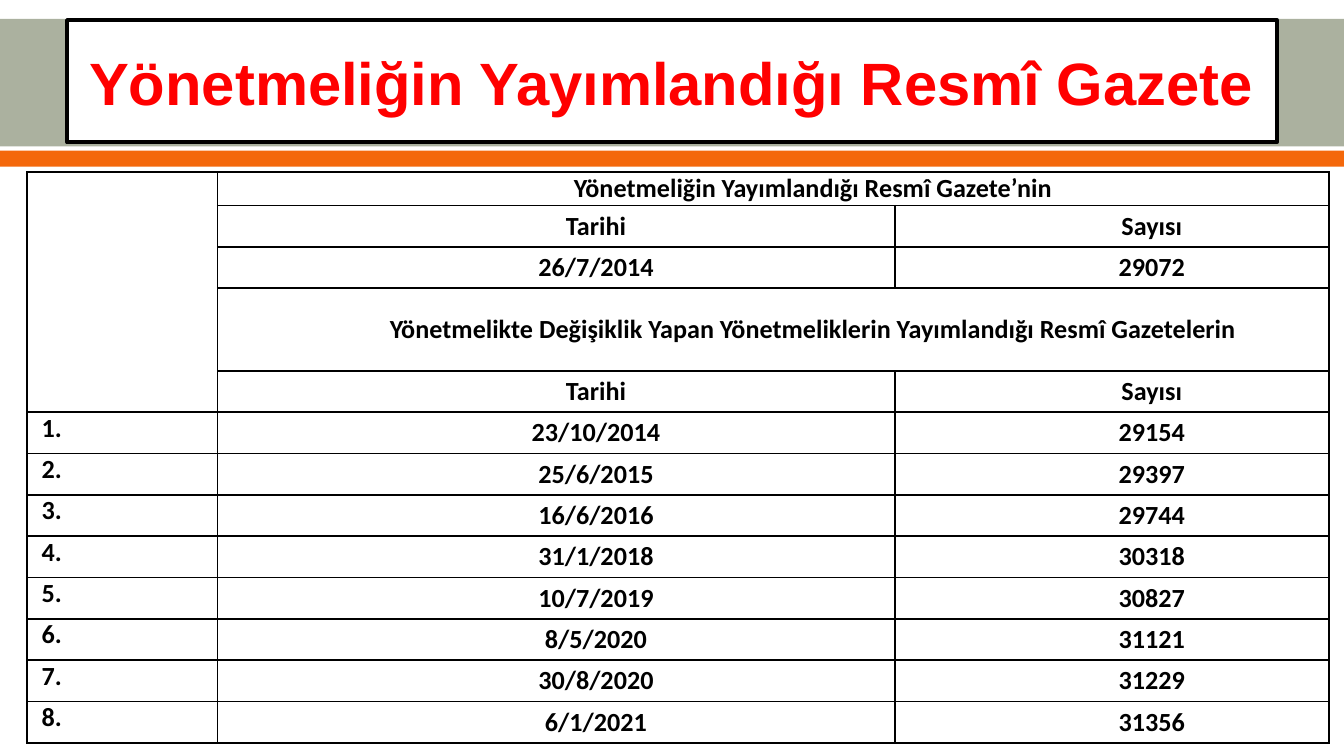
from dataclasses import dataclass
from typing import NamedTuple

from lxml.etree import SubElement
from pptx import Presentation
from pptx.dml.color import RGBColor
from pptx.enum.shapes import MSO_SHAPE
from pptx.enum.text import MSO_ANCHOR, MSO_AUTO_SIZE, PP_ALIGN
from pptx.oxml.ns import qn
from pptx.util import Inches, Pt


@dataclass(frozen=True)
class Theme:
    sage: RGBColor = RGBColor(0xAB, 0xB1, 0x9F)
    orange: RGBColor = RGBColor(0xF4, 0x68, 0x0B)
    white: RGBColor = RGBColor(0xFF, 0xFF, 0xFF)
    black: RGBColor = RGBColor(0, 0, 0)
    red: RGBColor = RGBColor(0xFF, 0, 0)
    title_font: str = "Arial"
    table_font: str = "Calibri"
    title_size: Pt = Pt(32)
    table_size: Pt = Pt(14)
    title_line: Pt = Pt(2.22)
    border: Pt = Pt(1)


class Band(NamedTuple):
    top: float
    height: float
    color: RGBColor


class Gazette(NamedTuple):
    date: str
    number: str


THEME = Theme()
SLIDE_WIDTH = 10
SLIDE_HEIGHT = SLIDE_WIDTH * 9 / 16
BANDS = [Band(0.14, 0.95, THEME.sage), Band(1.12, 0.12, THEME.orange)]
COLUMN_WIDTHS = [1.42, 5.04, 3.23]
TABLE_HEIGHT, FIRST_ROW_HEIGHT = 4.25, 0.25
HEADINGS = Gazette("Tarihi", "Sayısı")
REGULATION = Gazette("26/7/2014", "29072")
AMENDMENTS = [
    Gazette("23/10/2014", "29154"),
    Gazette("25/6/2015", "29397"),
    Gazette("16/6/2016", "29744"),
    Gazette("31/1/2018", "30318"),
    Gazette("10/7/2019", "30827"),
    Gazette("8/5/2020", "31121"),
    Gazette("30/8/2020", "31229"),
    Gazette("6/1/2021", "31356"),
]
TABLE_ROWS = [
    ("", "Yönetmeliğin Yayımlandığı Resmî Gazete’nin", ""),
    ("", *HEADINGS),
    ("", *REGULATION),
    ("", "Yönetmelikte Değişiklik Yapan Yönetmeliklerin Yayımlandığı Resmî Gazetelerin", ""),
    ("", *HEADINGS),
    *((f"{number}.", *gazette) for number, gazette in enumerate(AMENDMENTS, 1)),
]
SPANNING_ROWS = (0, 3)
HEADER_ROWS = 5


def set_attributes(target, values: dict) -> None:
    for name, value in values.items():
        setattr(target, name, value)


def add_band(slide, band: Band) -> None:
    """Place a full-width band behind the title."""
    shape = slide.shapes.add_shape(
        MSO_SHAPE.RECTANGLE, 0, Inches(band.top), Inches(SLIDE_WIDTH), Inches(band.height))
    shape.shadow.inherit = False
    shape.fill.solid()
    shape.fill.fore_color.rgb = band.color
    shape.line.fill.background()
    slide.shapes.title.element.addprevious(shape.element)


def format_title(title, text: str) -> None:
    set_attributes(title, {"left": Inches(0.5), "top": Inches(0.15),
                           "width": Inches(9), "height": Inches(0.91)})
    title.fill.solid()
    title.fill.fore_color.rgb = THEME.white
    title.line.color.rgb = THEME.black
    title.line.width = THEME.title_line
    set_attributes(title.text_frame, {
        "text": text, "word_wrap": True, "auto_size": MSO_AUTO_SIZE.NONE,
        "vertical_anchor": MSO_ANCHOR.MIDDLE})
    paragraph = title.text_frame.paragraphs[0]
    paragraph.alignment = PP_ALIGN.CENTER
    font = paragraph.runs[0].font
    set_attributes(font, {"name": THEME.title_font, "size": THEME.title_size, "bold": True})
    font.color.rgb = THEME.red


def add_borders(cell) -> None:
    properties = cell._tc.get_or_add_tcPr()
    for side in ("lnL", "lnR", "lnT", "lnB"):
        line = SubElement(properties, qn(f"a:{side}"), w=str(THEME.border))
        fill = SubElement(line, qn("a:solidFill"))
        SubElement(fill, qn("a:srgbClr"), val=str(THEME.black))


def format_cell(cell, text: str, is_number: bool) -> None:
    add_borders(cell)
    cell.fill.background()
    set_attributes(cell, {
        "margin_left": Inches(0.07), "margin_right": Inches(0.07),
        "margin_top": 0, "margin_bottom": 0,
        "vertical_anchor": MSO_ANCHOR.TOP if is_number else MSO_ANCHOR.MIDDLE})
    paragraph = cell.text_frame.paragraphs[0]
    paragraph.alignment = PP_ALIGN.JUSTIFY if is_number else PP_ALIGN.CENTER
    margin, indent = (0.28, -0.24) if is_number else (0, 0.59)
    paragraph_properties = paragraph._p.get_or_add_pPr()
    paragraph_properties.set("marL", str(Inches(margin)))
    paragraph_properties.set("indent", str(Inches(indent)))
    if not text:
        # An empty cell must not force its row taller than the text rows.
        SubElement(paragraph._p, qn("a:endParaRPr"), sz=str(int(THEME.table_size.pt * 100)))
        return
    run = paragraph.add_run()
    run.text = text
    set_attributes(run.font, {
        "name": THEME.table_font, "size": THEME.table_size, "bold": True})
    run.font.color.rgb = THEME.black


def add_gazette_table(slide) -> None:
    table = slide.shapes.add_table(
        len(TABLE_ROWS), len(COLUMN_WIDTHS), Inches(0.2), Inches(1.28),
        Inches(sum(COLUMN_WIDTHS)), Inches(TABLE_HEIGHT)).table
    set_attributes(table, {"first_row": False, "horz_banding": False})
    for column, width in zip(table.columns, COLUMN_WIDTHS):
        column.width = Inches(width)

    # The second spanning row is twice as tall as a plain row.
    plain_height = (TABLE_HEIGHT - FIRST_ROW_HEIGHT) / len(TABLE_ROWS)
    heights = [plain_height] * len(TABLE_ROWS)
    heights[0] = FIRST_ROW_HEIGHT
    heights[3] = 2 * plain_height
    for row_index, (texts, height) in enumerate(zip(TABLE_ROWS, heights)):
        table.rows[row_index].height = Inches(height)
        for column_index, text in enumerate(texts):
            format_cell(table.cell(row_index, column_index), text,
                        is_number=column_index == 0)

    table.cell(0, 0).merge(table.cell(HEADER_ROWS - 1, 0))
    for row_index in SPANNING_ROWS:
        table.cell(row_index, 1).merge(table.cell(row_index, 2))


def main() -> None:
    presentation = Presentation()
    set_attributes(presentation, {"slide_width": Inches(SLIDE_WIDTH),
                                  "slide_height": Inches(SLIDE_HEIGHT)})
    slide = presentation.slides.add_slide(presentation.slide_layouts.get_by_name("Title Only"))
    for band in BANDS:
        add_band(slide, band)
    format_title(slide.shapes.title, "Yönetmeliğin Yayımlandığı Resmî Gazete")
    add_gazette_table(slide)
    presentation.save("out.pptx")


if __name__ == "__main__":
    main()
